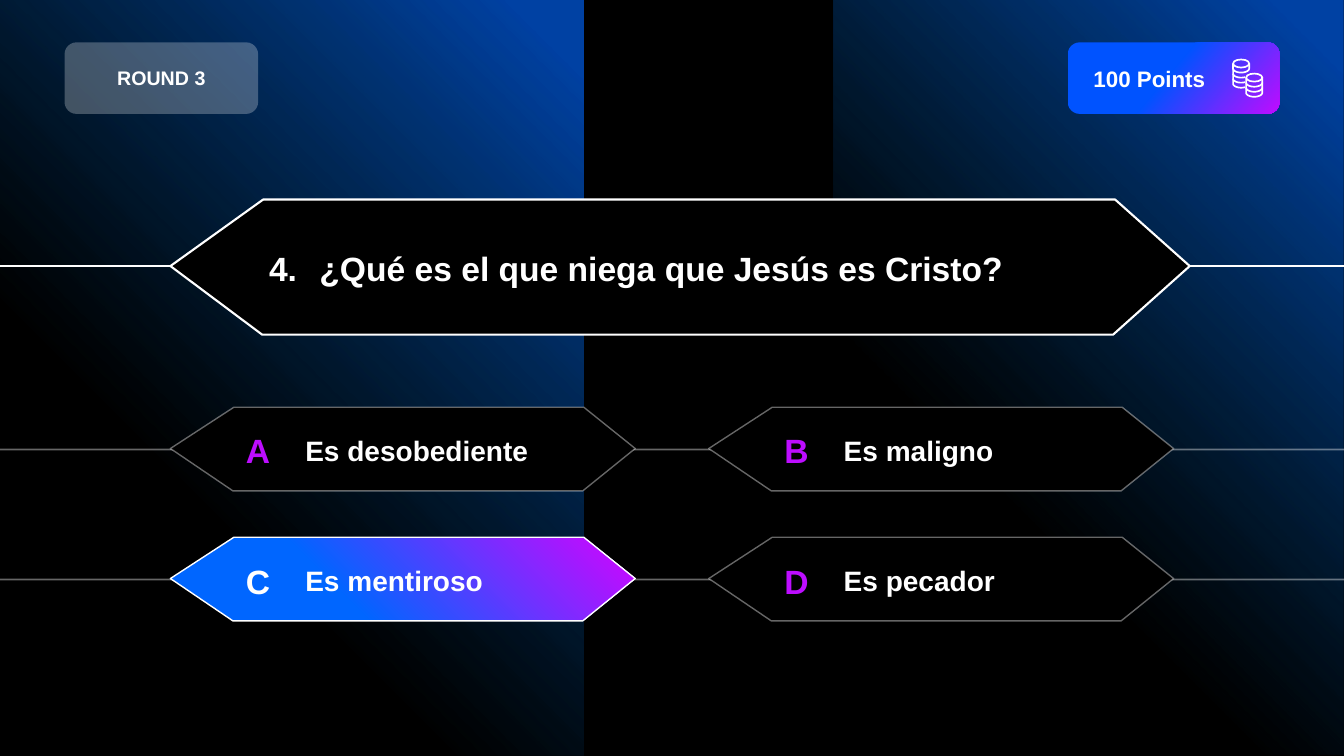
from math import cos, pi, sin

from lxml import etree
from pptx import Presentation
from pptx.dml.color import RGBColor
from pptx.enum.shapes import MSO_CONNECTOR, MSO_SHAPE
from pptx.enum.text import MSO_ANCHOR, PP_ALIGN
from pptx.oxml import parse_xml
from pptx.oxml.ns import nsdecls, qn
from pptx.util import Inches, Pt

RECT = MSO_SHAPE.RECTANGLE
ROUND = MSO_SHAPE.ROUNDED_RECTANGLE
OVAL = MSO_SHAPE.OVAL
STRAIGHT = MSO_CONNECTOR.STRAIGHT
LEFT, CENTER = PP_ALIGN.LEFT, PP_ALIGN.CENTER
MIDDLE = MSO_ANCHOR.MIDDLE

WIDTH, HEIGHT = 13.33, 7.5
FONT = "Arial"
WHITE, BLACK, PURPLE, BLUE = "FFFFFF", "000000", "BD0DFF", "0066FF"
CORNER = '<a:path path="circle"><a:fillToRect l="100000" b="100000"/></a:path>'
SLANT = '<a:lin ang="2400000" scaled="0"/>'
GLOW = [(0, BLUE, 63), (6, BLUE, 63), (66, "0070C0", 0), (100, BLACK, 0)]
PICK = [(0, PURPLE, 100), (7, PURPLE, 100), (64, BLUE, 100), (100, BLUE, 100)]
PRIZE = [(0, "0053FF", 100), (47, "0053FF", 100), (99, PURPLE, 100), (100, PURPLE, 100)]


def color(code):
    return RGBColor.from_string(code)


class Board:
    def __init__(self, slide):
        self.slide = slide
        self.shapes = slide.shapes
        back = slide.background.fill
        back.solid()
        back.fore_color.rgb = color(BLACK)

    def fade(self, fill, alpha):
        if alpha < 100:
            tint = fill.find(qn("a:solidFill"))[0]
            etree.SubElement(tint, qn("a:alpha")).set("val", str(alpha * 1000))

    def paint(self, shape, code, alpha=100):
        shape.shadow.inherit = False
        shape.fill.solid()
        shape.fill.fore_color.rgb = color(code)
        self.fade(shape._element.spPr, alpha)

    def blend(self, shape, stops, form):
        self.paint(shape, BLACK)
        marks = "".join(
            f'<a:gs pos="{spot * 1000}"><a:srgbClr val="{code}">'
            f'<a:alpha val="{alpha * 1000}"/></a:srgbClr></a:gs>'
            for spot, code, alpha in stops
        )
        grad = parse_xml(
            f'<a:gradFill {nsdecls("a")} rotWithShape="1">'
            f"<a:gsLst>{marks}</a:gsLst>{form}</a:gradFill>"
        )
        props = shape._element.spPr
        props.replace(props.find(qn("a:solidFill")), grad)

    def stroke(self, shape, size, alpha=100):
        shape.line.width = Pt(size)
        shape.line.fill.solid()
        shape.line.color.rgb = color(WHITE)
        self.fade(shape.line._get_or_add_ln(), alpha)

    def box(self, kind, x, y, w, h):
        shape = self.shapes.add_shape(kind, Inches(x), Inches(y), Inches(w), Inches(h))
        shape.shadow.inherit = False
        shape.line.fill.background()
        return shape

    def label(self, shape, words, size, code=WHITE, align=LEFT):
        frame = shape.text_frame
        frame.word_wrap = True
        frame.vertical_anchor = MIDDLE
        frame.text = words
        para = frame.paragraphs[0]
        para.alignment = align
        font = para.runs[0].font
        font.name, font.size, font.bold = FONT, Pt(size), True
        font.color.rgb = color(code)

    def text(self, x, y, w, h, words, size, code=WHITE, align=LEFT):
        shape = self.shapes.add_textbox(Inches(x), Inches(y), Inches(w), Inches(h))
        self.label(shape, words, size, code, align)

    def rule(self, y, size, alpha=100):
        line = self.shapes.add_connector(
            STRAIGHT, Inches(0), Inches(y), Inches(WIDTH), Inches(y)
        )
        self.stroke(line, size, alpha)
        etree.SubElement(line._element.spPr, qn("a:effectLst"))

    def outline(self, points, close=True):
        spots = [(Inches(x), Inches(y)) for x, y in points]
        pen = self.shapes.build_freeform(*spots[0])
        pen.add_line_segments(spots[1:], close=close)
        shape = pen.convert_to_shape()
        shape.shadow.inherit = False
        return shape

    def option(self, x, y, letter, words, chosen=False):
        edge = [(0, 0.41), (0.63, 0), (4.1, 0), (4.61, 0.41), (4.09, 0.83), (0.62, 0.83)]
        shape = self.outline([(x + dx, y + dy) for dx, dy in edge])
        if chosen:
            self.blend(shape, PICK, CORNER)
        else:
            self.paint(shape, BLACK)
        self.stroke(shape, 1, 100 if chosen else 40)
        self.text(x + 0.61, y + 0.03, 0.52, 0.8, letter, 24, WHITE if chosen else PURPLE, CENTER)
        self.text(x + 1.24, y + 0.03, 2.9, 0.8, words, 20)

    def stack(self, x, y, starts):
        rx, ry, step = 0.08, 0.04, 0.05
        lid = self.box(OVAL, x - rx, y - ry, 2 * rx, 2 * ry)
        lid.fill.background()
        self.stroke(lid, 1.2)
        for row, start in enumerate(starts):
            top = y + row * step
            turns = [start + (pi - start) * i / 16 for i in range(17)]
            rim = [(x + rx * cos(t), top + step + ry * sin(t)) for t in turns]
            head = [(x + rx, top)] if start == 0 else []
            band = self.outline(head + rim + [(x - rx, top)], close=False)
            band.fill.background()
            self.stroke(band, 1.2)


def main():
    deck = Presentation()
    deck.slide_width, deck.slide_height = Inches(WIDTH), Inches(HEIGHT)
    board = Board(deck.slides.add_slide(deck.slide_layouts[6]))

    for x, w, h in [(0, 5.79, 7.5), (8.27, 5.06, 7.48)]:
        board.blend(board.box(RECT, x, 0, w, h), GLOW, CORNER)

    board.rule(2.64, 1.5)
    frame = board.outline(
        [(1.69, 2.64), (2.61, 1.98), (11.06, 1.98), (11.8, 2.64), (11.04, 3.32), (2.6, 3.32)]
    )
    board.paint(frame, BLACK)
    board.stroke(frame, 1.5)
    board.text(2.57, 1.99, 8.42, 1.33, "4.\t¿Qué es el que niega que Jesús es Cristo?", 24)

    rows = [
        [("A", "Es desobediente"), ("B", "Es maligno")],
        [("C", "Es mentiroso"), ("D", "Es pecador")],
    ]
    for row, pair in enumerate(rows):
        y = 4.04 + row * 1.29
        board.rule(y + 0.42, 1.25, 40)
        for col, (letter, words) in enumerate(pair):
            board.option(1.69 + col * 5.34, y, letter, words, letter == "C")

    prize = board.box(ROUND, 10.59, 0.42, 2.1, 0.71)
    board.blend(prize, PRIZE, SLANT)
    board.label(prize, "100 Points", 16)
    prize.text_frame.margin_left = Inches(0.22)
    board.stack(12.31, 0.63, [0, pi / 3, pi / 3, pi / 3])
    board.stack(12.44, 0.77, [0, 0, 0])

    badge = board.box(ROUND, 0.64, 0.42, 1.92, 0.71)
    board.paint(badge, WHITE, 26)
    board.label(badge, "ROUND 3", 14, align=CENTER)

    deck.save("out.pptx")


if __name__ == "__main__":
    main()
